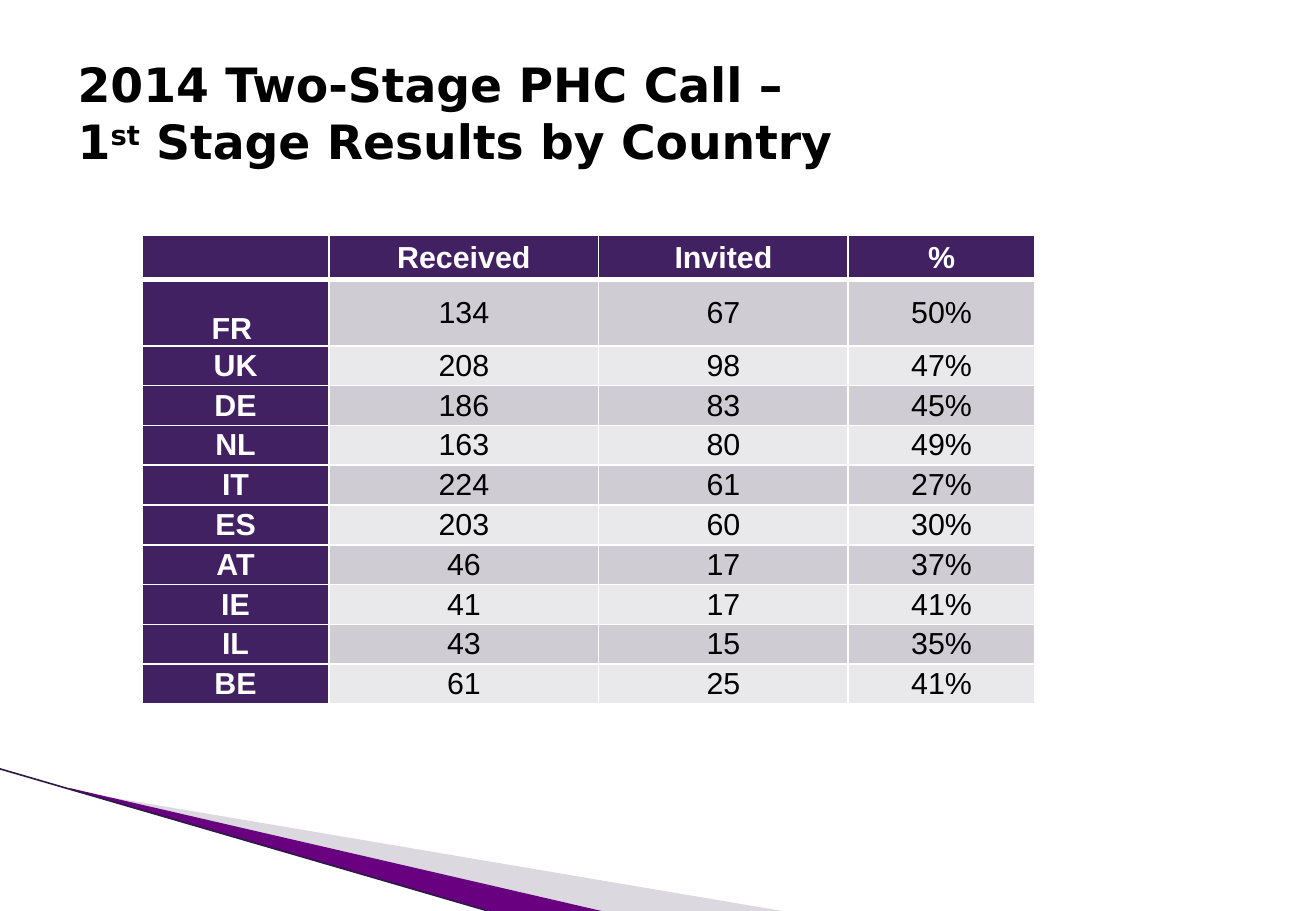
from dataclasses import dataclass

from lxml import etree
from pptx import Presentation
from pptx.dml.color import RGBColor
from pptx.enum.shapes import MSO_CONNECTOR
from pptx.enum.text import MSO_ANCHOR, PP_ALIGN
from pptx.oxml.ns import qn
from pptx.util import Inches, Pt

STRAIGHT = MSO_CONNECTOR.STRAIGHT
MIDDLE, BOTTOM = MSO_ANCHOR.MIDDLE, MSO_ANCHOR.BOTTOM
CENTER = PP_ALIGN.CENTER
SLIDE_W, SLIDE_H = Inches(10.83), Inches(7.5)


@dataclass(frozen=True)
class Theme:
    ink: str = "000000"
    white: str = "FFFFFF"
    header: str = "422163"
    bands: tuple = ("CFCDD3", "E9E8EA")
    grey: str = "A7A2B1"
    violet: str = "68007F"
    edge: str = "2E1A47"
    title_font: str = "DejaVu Sans"
    table_font: str = "Arial"
    title_size: int = 28
    table_size: int = 18


THEME = Theme()

# Points and lengths are percentages of the slide's width and height.
GREY_WEDGE = [(5.45, 86.8), (59.46, 100), (45.61, 100), (5.45, 86.67)]
VIOLET_WEDGE = [(5.36, 86.53), (45.71, 100), (37.21, 100), (5.36, 86.67)]
EDGE_LINE = [(0, 84.4), (37.1, 100)]
COLUMN_SHARES = [14.2, 20.5, 18.95, 14.2]
ROW_SHARES = [4.8, 7.3] + [4.37] * 9

HEADINGS = ("", "Received", "Invited", "%")
RESULTS = [
    ("FR", 134, 67, "50%"),
    ("UK", 208, 98, "47%"),
    ("DE", 186, 83, "45%"),
    ("NL", 163, 80, "49%"),
    ("IT", 224, 61, "27%"),
    ("ES", 203, 60, "30%"),
    ("AT", 46, 17, "37%"),
    ("IE", 41, 17, "41%"),
    ("IL", 43, 15, "35%"),
    ("BE", 61, 25, "41%"),
]


def across(share):
    return round(SLIDE_W * share / 100)


def down(share):
    return round(SLIDE_H * share / 100)


def rgb(color):
    return RGBColor.from_string(color)


def add_run(p, text, color, **formats):
    r = p.add_run()
    r.text = text
    for name, value in formats.items():
        setattr(r.font, name, value)
    r.font.color.rgb = rgb(color)
    return r


def add_wedge(s, points, color, alpha=None):
    """Draw a filled outline; alpha is its opacity in percent."""
    corners = [(across(x), down(y)) for x, y in points]
    builder = s.shapes.build_freeform(*corners[0], scale=1.0)
    builder.add_line_segments(corners[1:], close=True)
    sp = builder.convert_to_shape()
    sp.shadow.inherit = False
    sp.line.fill.background()
    sp.fill.solid()
    sp.fill.fore_color.rgb = rgb(color)
    if alpha is not None:
        clr = sp.fill._xPr.find(".//" + qn("a:srgbClr"))
        etree.SubElement(clr, qn("a:alpha"), val=str(alpha * 1000))


def add_line(s, points, color, width):
    (x1, y1), (x2, y2) = points
    line = s.shapes.add_connector(STRAIGHT, across(x1), down(y1), across(x2), down(y2))
    line.line.color.rgb = rgb(color)
    line.line.width = Pt(width)
    etree.SubElement(line._element.spPr, qn("a:effectLst"))


def add_title(s):
    sp = s.shapes.add_textbox(across(5), down(4), across(78.85), down(16.67))
    tf = sp.text_frame
    tf.word_wrap = True
    tf.vertical_anchor = MIDDLE
    p = tf.paragraphs[0]
    style = dict(name=THEME.title_font, size=Pt(THEME.title_size), bold=True)
    add_run(p, "2014 Two-Stage PHC Call –", THEME.ink, **style)
    p.add_line_break()
    add_run(p, "1", THEME.ink, **style)
    ordinal = add_run(p, "st", THEME.ink, **style)
    ordinal._r.get_or_add_rPr().set("baseline", "30000")
    add_run(p, " Stage Results by Country", THEME.ink, **style)


def set_borders(cell, bottom):
    tc_pr = cell._tc.get_or_add_tcPr()
    for side, width in dict(L=1, R=1, T=1, B=bottom).items():
        ln = etree.SubElement(tc_pr, qn(f"a:ln{side}"), w=str(Pt(width)))
        fill = etree.SubElement(ln, qn("a:solidFill"))
        etree.SubElement(fill, qn("a:srgbClr"), val=THEME.white)


def fill_cell(cell, text, fill, color, bold, bottom):
    margins = dict(margin_left=Inches(0.05), margin_right=Inches(0.05),
                   margin_top=0, margin_bottom=0, vertical_anchor=MIDDLE)
    for name, value in margins.items():
        setattr(cell, name, value)
    set_borders(cell, bottom)
    cell.fill.solid()
    cell.fill.fore_color.rgb = rgb(fill)
    p = cell.text_frame.paragraphs[0]
    p.alignment = CENTER
    if text:
        add_run(p, text, color, name=THEME.table_font,
                size=Pt(THEME.table_size), bold=bold)


def add_results_table(s):
    rows = [HEADINGS] + RESULTS
    frame = s.shapes.add_table(len(rows), len(HEADINGS), across(10.8), down(25.87),
                               across(sum(COLUMN_SHARES)), down(sum(ROW_SHARES)))
    table = frame.table
    table.first_row = table.horz_banding = False
    for column, share in zip(table.columns, COLUMN_SHARES):
        column.width = across(share)
    for row, share in zip(table.rows, ROW_SHARES):
        row.height = down(share)
    for i, values in enumerate(rows):
        for j, value in enumerate(values):
            heading = i == 0 or j == 0
            fill = THEME.header if heading else THEME.bands[(i - 1) % 2]
            color = THEME.white if heading else THEME.ink
            fill_cell(table.cell(i, j), str(value), fill, color, heading,
                      bottom=3 if i == 0 else 1)
    first_country = table.cell(1, 0)
    first_country.vertical_anchor = BOTTOM
    first_country.margin_right = Inches(0.11)


def main():
    prs = Presentation()
    prs.slide_width, prs.slide_height = SLIDE_W, SLIDE_H
    s = prs.slides.add_slide(prs.slide_layouts[6])
    add_wedge(s, GREY_WEDGE, THEME.grey, alpha=40)
    add_wedge(s, VIOLET_WEDGE, THEME.violet)
    add_line(s, EDGE_LINE, THEME.edge, 0.95)
    add_results_table(s)
    add_title(s)
    prs.save("out.pptx")


if __name__ == "__main__":
    main()
